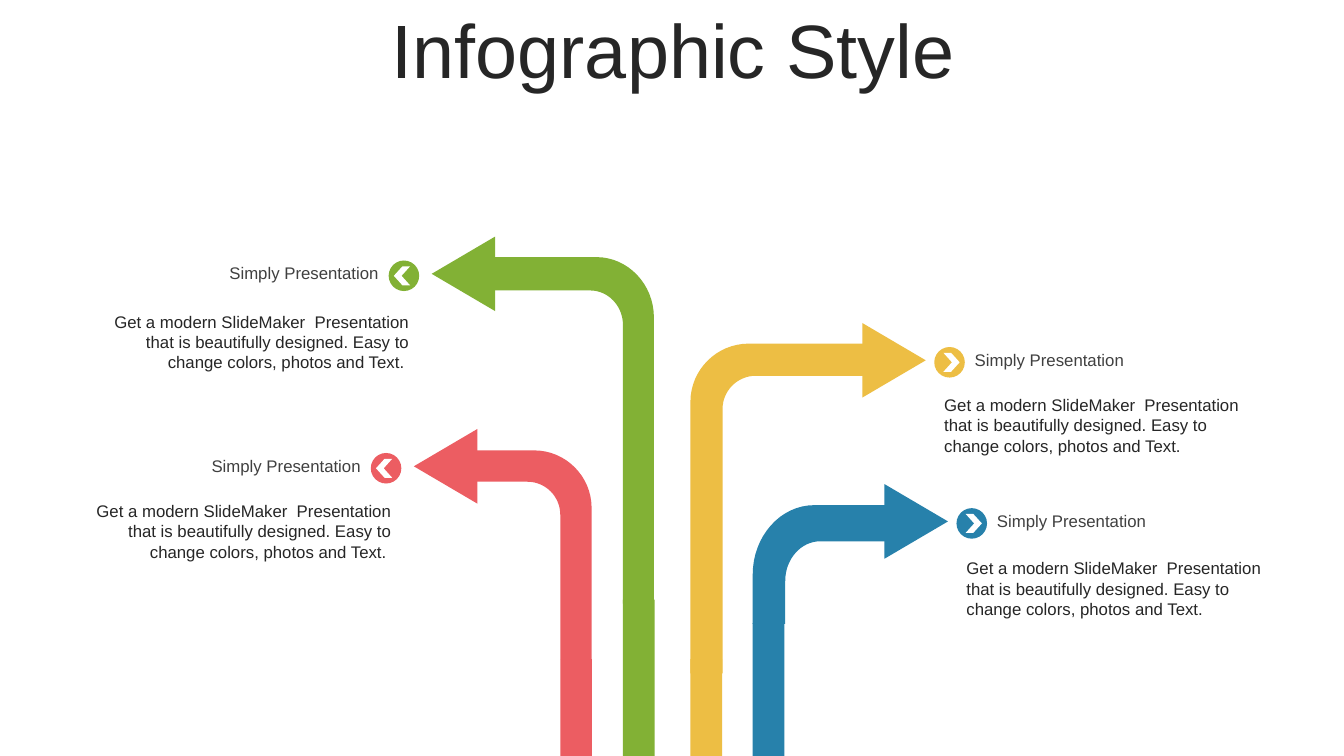
from dataclasses import dataclass

from pptx import Presentation
from pptx.dml.color import RGBColor
from pptx.enum import shapes, text
from pptx.util import Cm, Pt

RED = RGBColor(0xEC, 0x5D, 0x62)
YELLOW = RGBColor(0xED, 0xBE, 0x44)
GREEN = RGBColor(0x82, 0xB1, 0x35)
BLUE = RGBColor(0x27, 0x81, 0xAB)
WHITE = RGBColor(0xFF, 0xFF, 0xFF)
DARK = RGBColor(0x26, 0x26, 0x26)
GREY = RGBColor(0x40, 0x40, 0x40)

FONT = "Arial"
HEIGHT = 19.05
STEM = 0.8
HEAD_W, HEAD_L = 1.88, 1.6
DOT = 0.77
INNER = 0.57  # inner bend radius as a share of the outer one
STEPS = 16
HEADING = "Simply Presentation"
BODY = ("Get a modern SlideMaker  Presentation that is beautifully "
        "designed. Easy to change colors, photos and Text.")


@dataclass
class Arrow:
    """A bent arrow, in cm; side is -1 when it points left, 1 when right."""
    color: RGBColor
    side: int
    tip: float
    mid: float
    end: float
    top: float
    low: float
    outer: float
    inner: float
    rx: float
    ry: float
    foot: float
    stem: float
    note: float


ARROWS = [
    Arrow(RED, -1, 10.43, 11.75, 11.86, 11.35, 12.14, 14.91, 14.12,
          1.45, 1.45, 16.61, 16.61, 12.5),
    Arrow(YELLOW, 1, 23.33, 9.08, 22.07, 8.66, 9.47, 17.4, 18.21,
          1.47, 1.47, 16.97, 16.61, 9.83),
    Arrow(GREEN, -1, 10.88, 6.9, 11.81, 6.48, 7.32, 16.48, 15.7,
          1.45, 1.52, 15.21, 15.11, 7.72),
    Arrow(BLUE, 1, 23.89, 13.14, 22.53, 12.73, 13.64, 18.97, 19.79,
          1.55, 1.75, 15.72, 15.7, 13.94),
]


def paint(shape, color):
    shape.shadow.inherit = False
    shape.fill.solid()
    shape.fill.fore_color.rgb = color
    shape.line.fill.background()


def add_form(slide, kind, x, y, w, h, color, turn=0):
    """Add a preset shape centred on x, y."""
    form = slide.shapes.add_shape(
        kind, Cm(x - w / 2), Cm(y - h / 2), Cm(w), Cm(h))
    form.rotation = turn
    paint(form, color)
    return form


def write(para, words, size, color, align):
    para.alignment = align
    run = para.add_run()
    run.text = words
    run.font.name = FONT
    run.font.size = Pt(size)
    run.font.color.rgb = color


def add_label(slide, edge, top, w, h, words, color, side, anchor):
    """Add text that runs outward from the edge."""
    left = edge if side > 0 else edge - w
    frame = slide.shapes.add_textbox(
        Cm(left), Cm(top), Cm(w), Cm(h)).text_frame
    frame.word_wrap = True
    frame.vertical_anchor = anchor
    align = text.PP_ALIGN.LEFT if side > 0 else text.PP_ALIGN.RIGHT
    write(frame.paragraphs[0], words, 12, color, align)


def corner(x, y, rx, ry, side):
    """Points of a rounded corner at x, y, from its top to its side."""
    start, bend = (x + side * rx, y), (x + side * rx * 0.45, y)
    pull, stop = (x, y + ry * 0.45), (x, y + ry)
    points = []
    for step in range(STEPS + 1):
        t = step / STEPS
        parts = ((1 - t) ** 3, 3 * t * (1 - t) ** 2,
                 3 * t * t * (1 - t), t ** 3)
        points.append(tuple(
            sum(part * spot[axis] for part, spot
                in zip(parts, (start, bend, pull, stop)))
            for axis in (0, 1)))
    return points


def add_bend(slide, a):
    outside = corner(a.outer, a.top, a.rx, a.ry, a.side)
    inside = corner(a.inner, a.low, a.rx * INNER, a.ry * INNER, a.side)
    points = ([(a.end, a.top)] + outside
              + [(a.outer, a.foot), (a.inner, a.foot)]
              + inside[::-1] + [(a.end, a.low)])
    spots = [(Cm(x), Cm(y)) for x, y in points]
    pen = slide.shapes.build_freeform(*spots[0])
    pen.add_line_segments(spots[1:], close=True)
    paint(pen.convert_to_shape(), a.color)


def add_arrow(slide, a):
    kind = shapes.MSO_SHAPE
    add_bend(slide, a)
    add_form(slide, kind.ISOSCELES_TRIANGLE, a.tip - a.side * HEAD_L / 2,
             a.mid, HEAD_W, HEAD_L, a.color, a.side * 90 % 360)
    add_form(slide, kind.RECTANGLE, min(a.outer, a.inner) + STEM / 2,
             (a.stem + HEIGHT) / 2, STEM, HEIGHT - a.stem, a.color)


def add_note(slide, a):
    """Add the round marker, heading and text beside an arrow."""
    kind, anchor = shapes.MSO_SHAPE, text.MSO_ANCHOR
    x = a.tip + (0.6 if a.side > 0 else -0.7)
    y = a.mid + 0.05
    add_form(slide, kind.OVAL, x, y, DOT, DOT, a.color)
    mark = add_form(slide, kind.CHEVRON, x + a.side * 0.05, y, 0.41, 0.48,
                    WHITE, 0 if a.side > 0 else 180)
    mark.adjustments[0] = 0.529
    reach = a.side * DOT / 2
    add_label(slide, x + reach, a.mid - 0.4, 5.36, 0.76, HEADING, GREY,
              a.side, anchor.MIDDLE)
    words = BODY if a.side > 0 else BODY + " "
    add_label(slide, x - reach, a.note, 8.3, 1.8, words, DARK,
              a.side, anchor.TOP)


def add_title(slide, words):
    title = slide.shapes.title
    title.left, title.top = Cm(0.89), Cm(0.36)
    title.width, title.height = Cm(32.16), Cm(2.01)
    frame = title.text_frame
    frame.auto_size = text.MSO_AUTO_SIZE.NONE
    frame.vertical_anchor = text.MSO_ANCHOR.MIDDLE
    para = frame.paragraphs[0]
    para.line_spacing = 0.9
    write(para, words, 54, DARK, text.PP_ALIGN.CENTER)


def main():
    deck = Presentation()
    deck.slide_width, deck.slide_height = Cm(33.87), Cm(HEIGHT)
    slide = deck.slides.add_slide(deck.slide_layouts[5])
    add_title(slide, "Infographic Style")
    for arrow in ARROWS:
        add_arrow(slide, arrow)
        add_note(slide, arrow)
    deck.save("out.pptx")


if __name__ == "__main__":
    main()
